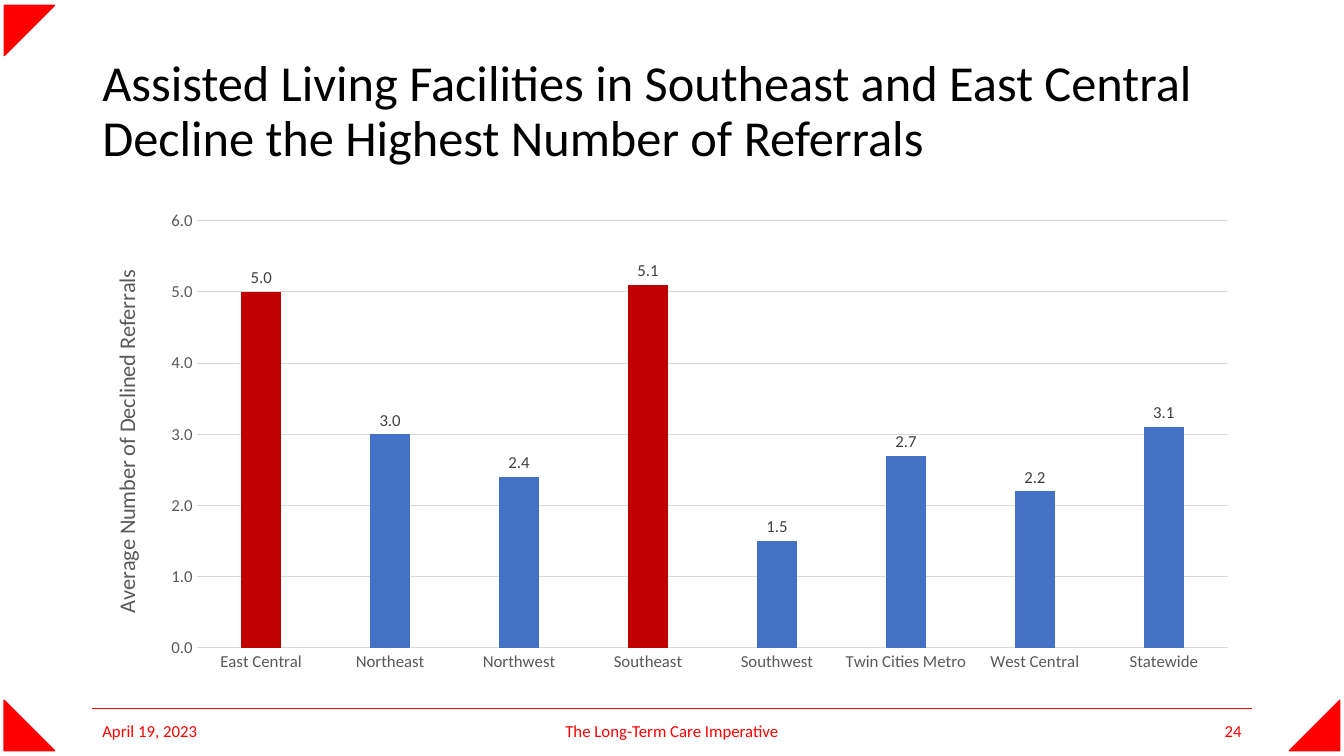
from lxml import etree
from pptx import Presentation
from pptx import util as u
from pptx.chart.data import CategoryChartData
from pptx.dml.color import RGBColor
from pptx.enum import chart as ch, shapes, text
from pptx.oxml import parse_xml
from pptx.oxml.ns import nsdecls, qn

PX = 9525
FONT = "Calibri"
RED, DARK_RED, BLUE = "FF0000", "C00000", "4472C4"
BLACK, GREY, LABEL_GREY, GRID = "000000", "595959", "404040", "D9D9D9"

REFERRALS = {
    "East Central": 5.0, "Northeast": 3.0, "Northwest": 2.4, "Southeast": 5.1,
    "Southwest": 1.5, "Twin Cities Metro": 2.7, "West Central": 2.2, "Statewide": 3.1,
}
HIGHEST = ("East Central", "Southeast")


def px(*lengths):
    return [u.Emu(n * PX) for n in lengths]


def rgb(hex_colour):
    return RGBColor.from_string(hex_colour)


def set_font(font, size, colour):
    font.name, font.size, font.bold = FONT, u.Pt(size), False
    font.color.rgb = rgb(colour)


def set_line(line, colour, width):
    line.color.rgb = rgb(colour)
    line.width = u.Pt(width)


def add_text(slide, box, words, size, colour, align=text.PP_ALIGN.LEFT):
    tf = slide.shapes.add_textbox(*px(*box)).text_frame
    tf.word_wrap = True
    tf.vertical_anchor = text.MSO_ANCHOR.MIDDLE
    p = tf.paragraphs[0]
    p.text, p.alignment = words, align
    set_font(p.font, size, colour)
    return p


def add_corners(slide, box, side=48):
    """Put a red triangle in every corner of the box but the top right."""
    x, y, w, h = box
    right, bottom = x + w - side, y + h - side
    for left, top, turn in ((x, y, 90), (right, bottom, 270), (x, bottom, 0)):
        sp = slide.shapes.add_shape(
            shapes.MSO_SHAPE.RIGHT_TRIANGLE, *px(left, top, side, side))
        sp.rotation = turn
        sp.shadow.inherit = False
        sp.fill.solid()
        sp.fill.fore_color.rgb = rgb(RED)
        set_line(sp.line, RED, 1)


def add_title(slide, box, words):
    add_text(slide, box, words, 36, BLACK).line_spacing = 0.9


def add_footer(slide, box, date, owner, number):
    x, y, w, h = box
    rule = slide.shapes.add_connector(
        shapes.MSO_CONNECTOR.STRAIGHT, *px(x, y, x + w, y))
    set_line(rule.line, RED, 0.5)
    etree.SubElement(rule._element.spPr, qn("a:effectLst"))
    side, middle = 288, 432
    align = text.PP_ALIGN
    for left, width, words, how in (
            (x, side, date, align.LEFT),
            (x + (w - middle) // 2, middle, owner, align.CENTER),
            (x + w - side, side, number, align.RIGHT)):
        add_text(slide, (left, y + 2, width, h - 2), words, 12, RED, how)


def fix_plot_area(chart, x, y, w, h):
    """Place the inner plot area, in fractions of the chart."""
    plot_area = chart._chartSpace.chart.plotArea
    for old in plot_area.findall(qn("c:layout")):
        plot_area.remove(old)
    plot_area.insert(0, parse_xml(
        f'<c:layout {nsdecls("c")}><c:manualLayout><c:layoutTarget val="inner"/>'
        '<c:xMode val="edge"/><c:yMode val="edge"/>'
        f'<c:x val="{x}"/><c:y val="{y}"/><c:w val="{w}"/><c:h val="{h}"/>'
        '</c:manualLayout></c:layout>'))


def style_axes(chart):
    for axis in (chart.category_axis, chart.value_axis):
        axis.major_tick_mark = axis.minor_tick_mark = ch.XL_TICK_MARK.NONE
        set_font(axis.tick_labels.font, 12, GREY)
    set_line(chart.category_axis.format.line, GRID, 0.75)
    values = chart.value_axis
    values.minimum_scale, values.maximum_scale, values.major_unit = 0, 6, 1
    values.format.line.fill.background()
    set_line(values.major_gridlines.format.line, GRID, 0.75)
    values.tick_labels.number_format = "0.0"
    values.tick_labels.number_format_is_linked = False
    p = values.axis_title.text_frame.paragraphs[0]
    p.text = "Average Number of Declined Referrals"
    set_font(p.font, 16, GREY)


def add_referral_chart(slide, box):
    data = CategoryChartData(number_format="0.0")
    data.categories = list(REFERRALS)
    data.add_series("Series 1", list(REFERRALS.values()))
    chart = slide.shapes.add_chart(
        ch.XL_CHART_TYPE.COLUMN_CLUSTERED, *px(*box), data).chart
    chart.has_title = chart.has_legend = False
    set_font(chart.font, 10, BLACK)
    style_axes(chart)
    fix_plot_area(chart, 0.09, 0.04, 0.89, 0.89)

    plot = chart.plots[0]
    plot.gap_width, plot.overlap = 219, -27
    plot.vary_by_categories = False
    plot.has_data_labels = True
    labels = plot.data_labels
    labels.show_value = True
    labels.position = ch.XL_LABEL_POSITION.OUTSIDE_END
    labels.number_format, labels.number_format_is_linked = "0.0", False
    set_font(labels.font, 12, LABEL_GREY)

    series = plot.series[0]
    series.format.fill.solid()
    series.format.fill.fore_color.rgb = rgb(BLUE)
    for i, region in enumerate(REFERRALS):
        if region in HIGHEST:
            fill = series.points[i].format.fill
            fill.solid()
            fill.fore_color.rgb = rgb(DARK_RED)


def main():
    prs = Presentation()
    prs.slide_width, prs.slide_height = px(1280, 720)
    slide = prs.slides.add_slide(prs.slide_layouts[6])
    left, width = 88, 1104
    add_corners(slide, (4, 5, 1272, 710))
    add_title(slide, (left, 38, width, 139),
              "Assisted Living Facilities in Southeast and East Central "
              "Decline the Highest Number of Referrals")
    add_referral_chart(slide, (left, 192, width, 457))
    add_footer(slide, (left, 675, width, 40),
               "April 19, 2023", "The Long-Term Care Imperative", "24")
    prs.save("out.pptx")


if __name__ == "__main__":
    main()
